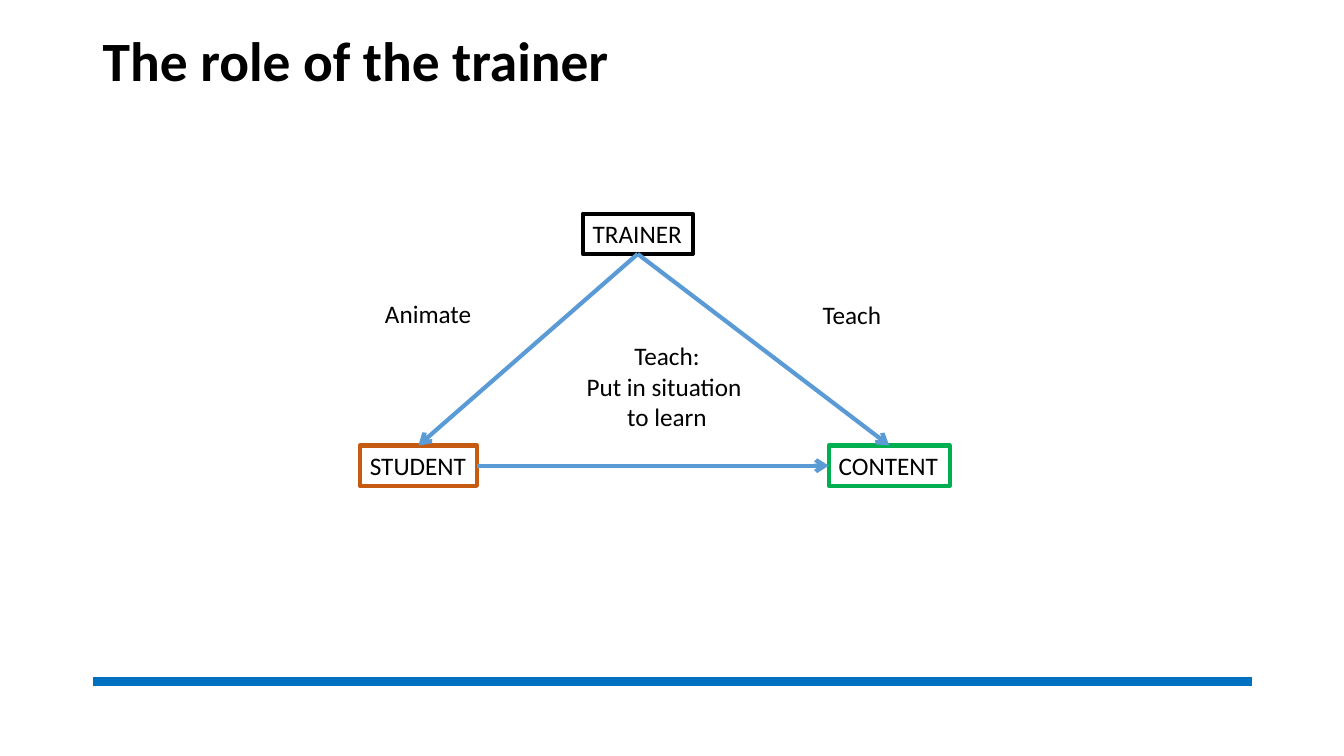
from lxml.etree import SubElement
from pptx import Presentation
from pptx.dml.color import RGBColor
from pptx.enum.shapes import MSO_CONNECTOR, MSO_SHAPE
from pptx.enum.text import MSO_ANCHOR, MSO_AUTO_SIZE, PP_ALIGN
from pptx.oxml.ns import qn
from pptx.util import Inches, Pt

COLORS = {
    "text": "000000",
    "trainer": "000000",
    "student": "C55A11",
    "content": "00B050",
    "arrow": "5B9BD5",
    "rule": "0070C0",
}
TOP, LEFT, BOTTOM, RIGHT = range(4)  # connection sites of a rectangle
BOX_HEIGHT = 0.4
BASE_TOP = 4.42


class TriangleSlide:
    """Holds the text style and the slide that the elements are added to."""

    body_format = {"name": "Calibri", "size": Pt(18), "bold": False}
    title_format = {"name": "Calibri", "size": Pt(39.6), "bold": True}

    def __init__(self, slide):
        self.slide = slide

    def color(self, name):
        return RGBColor.from_string(COLORS[name])

    def fill_text(self, shape, lines, font_format, alignment, frame_format):
        frame = shape.text_frame
        for name, value in frame_format.items():
            setattr(frame, name, value)
        for index, line in enumerate(lines):
            paragraph = frame.add_paragraph() if index else frame.paragraphs[0]
            paragraph.text = line
            paragraph.alignment = alignment
            for name, value in font_format.items():
                setattr(paragraph.font, name, value)
            paragraph.font.color.rgb = self.color("text")

    def fill_body(self, shape, lines, alignment=PP_ALIGN.LEFT):
        frame_format = {
            "word_wrap": False,
            "auto_size": MSO_AUTO_SIZE.SHAPE_TO_FIT_TEXT,
            "vertical_anchor": MSO_ANCHOR.TOP,
        }
        self.fill_text(shape, lines, self.body_format, alignment, frame_format)

    def title(self, text, left, top, width, height):
        shape = self.slide.shapes.add_textbox(*map(Inches, (left, top, width, height)))
        frame_format = {"word_wrap": True, "vertical_anchor": MSO_ANCHOR.MIDDLE}
        self.fill_text(shape, [text], self.title_format, PP_ALIGN.LEFT, frame_format)
        shape.text_frame.paragraphs[0].line_spacing = 0.9

    def label(self, lines, left, top, width, height, alignment=PP_ALIGN.LEFT):
        shape = self.slide.shapes.add_textbox(*map(Inches, (left, top, width, height)))
        self.fill_body(shape, lines, alignment)

    def box(self, text, left, top, width, color):
        shape = self.slide.shapes.add_shape(
            MSO_SHAPE.RECTANGLE, *map(Inches, (left, top, width, BOX_HEIGHT)))
        shape.shadow.inherit = False
        shape.fill.background()
        shape.line.color.rgb = self.color(color)
        shape.line.width = Pt(3)
        self.fill_body(shape, [text])
        return shape

    def line(self, start, end, color, width):
        connector = self.slide.shapes.add_connector(
            MSO_CONNECTOR.STRAIGHT, *map(Inches, (*start, *end)))
        connector.line.color.rgb = self.color(color)
        connector.line.width = Pt(width)
        SubElement(connector._element.spPr, qn("a:effectLst"))
        return connector

    def arrow(self, source, source_site, target, target_site):
        """Glue an arrow to a connection site of each of two boxes."""
        connector = self.line((0, 0), (1, 1), "arrow", 3)
        connector.begin_connect(source, source_site)
        connector.end_connect(target, target_site)
        outline = connector._element.spPr.find(qn("a:ln"))
        SubElement(outline, qn("a:tailEnd"), type="arrow")


def main():
    presentation = Presentation()
    presentation.slide_width = Inches(13.33)
    presentation.slide_height = Inches(7.5)
    slide = TriangleSlide(presentation.slides.add_slide(presentation.slide_layouts[6]))

    slide.line((0.92, 6.76), (12.42, 6.76), "rule", 6)
    slide.title("The role of the trainer", 0.92, 0.27, 11.5, 0.73)

    trainer = slide.box("TRAINER", 5.78, 2.12, 1.09, "trainer")
    student = slide.box("STUDENT", 3.57, BASE_TOP, 1.16, "student")
    content = slide.box("CONTENT", 8.22, BASE_TOP, 1.2, "content")

    slide.label(["Teach"], 8.06, 2.92, 0.79, 0.4)
    slide.label(["Teach:", "Put in situation ", "to learn"],
                5.71, 3.33, 1.81, 1.01, PP_ALIGN.CENTER)
    slide.label(["Animate"], 3.72, 2.91, 1.07, 0.4)

    slide.arrow(trainer, BOTTOM, student, TOP)
    slide.arrow(trainer, BOTTOM, content, TOP)
    slide.arrow(student, RIGHT, content, LEFT)

    presentation.save("out.pptx")


if __name__ == "__main__":
    main()
